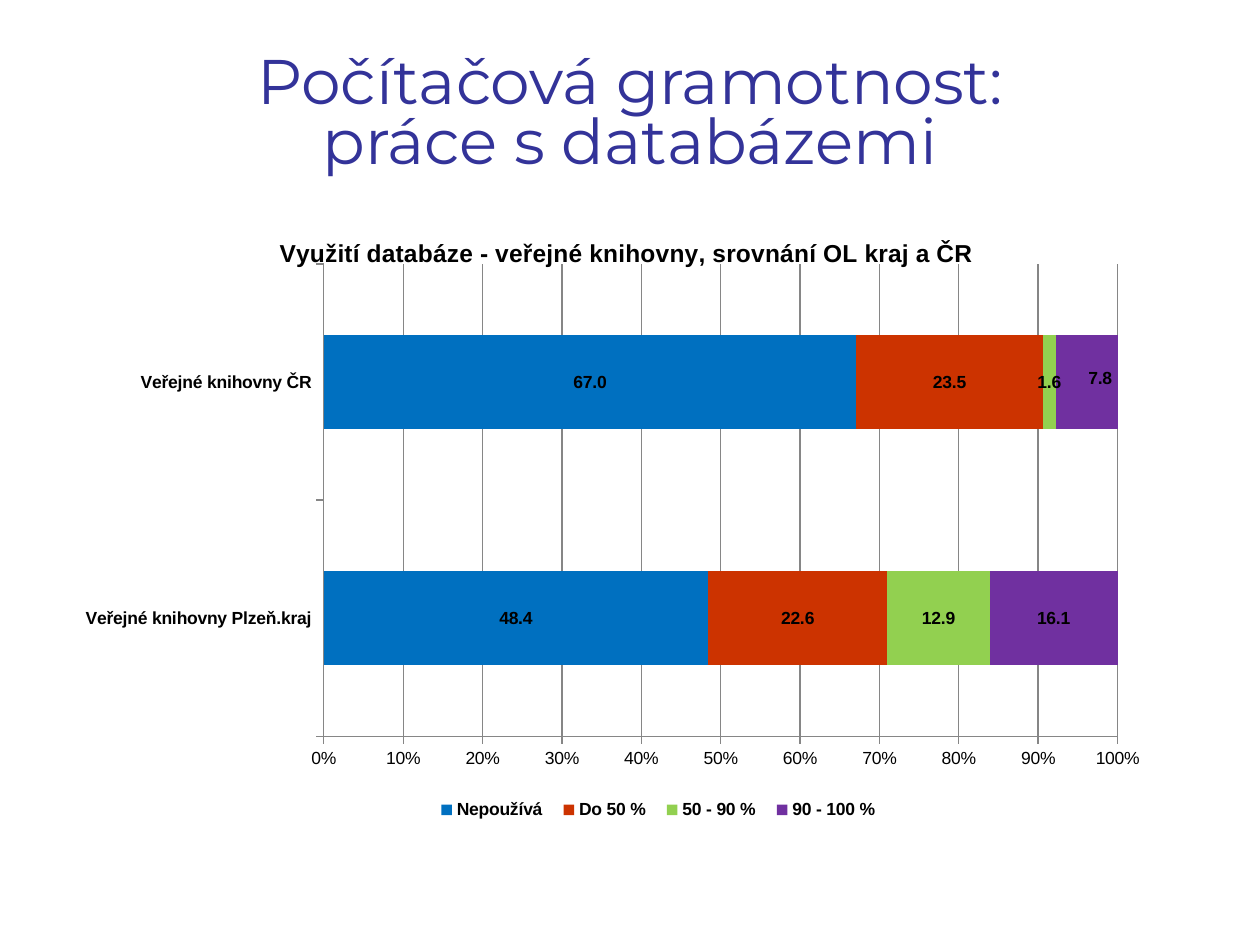
from lxml.etree import SubElement
from pptx import Presentation
from pptx.chart.data import CategoryChartData
from pptx.dml.color import RGBColor
from pptx.enum.chart import XL_CHART_TYPE as ChartType
from pptx.enum.chart import XL_LEGEND_POSITION as LegendPosition
from pptx.enum.chart import XL_TICK_MARK as TickMark
from pptx.enum.text import MSO_ANCHOR as Anchor
from pptx.enum.text import PP_ALIGN as Align
from pptx.oxml.ns import qn
from pptx.util import Pt

BLACK = RGBColor(0x00, 0x00, 0x00)
INDIGO = RGBColor(0x33, 0x33, 0x99)
GRAY = RGBColor(0x86, 0x86, 0x86)
BLUE = RGBColor(0x00, 0x70, 0xC0)
RED = RGBColor(0xCC, 0x33, 0x00)
GREEN = RGBColor(0x92, 0xD0, 0x50)
PURPLE = RGBColor(0x70, 0x30, 0xA0)

LIBRARIES = ["Veřejné knihovny Plzeň.kraj", "Veřejné knihovny ČR"]
USAGE = [
    ("Nepoužívá", (48.4, 67.0), BLUE),
    ("Do 50 %", (22.6, 23.5), RED),
    ("50 - 90 %", (12.9, 1.6), GREEN),
    ("90 - 100 %", (16.1, 7.8), PURPLE),
]
VALUE_FORMAT = "###0.0"


def style_font(font, size, color=BLACK, bold=False, name="Arial"):
    font.name = name
    font.size = Pt(size)
    font.bold = bold
    font.color.rgb = color


def place(element, after, **settings):
    """Give a chart part a manual layout, put right after a given child."""
    for old in element.findall(qn("c:layout")):
        element.remove(old)
    layout = SubElement(element, qn("c:layout"))
    manual = SubElement(layout, qn("c:manualLayout"))
    for key, value in settings.items():
        SubElement(manual, qn(f"c:{key}")).set("val", str(value))
    if after is None:
        element.insert(0, layout)
    else:
        element.find(qn(after)).addnext(layout)


def add_heading(page, lines):
    box = page.shapes.add_textbox(Pt(36), Pt(21.6), Pt(648), Pt(90))
    frame = box.text_frame
    frame.word_wrap = True
    frame.vertical_anchor = Anchor.MIDDLE
    para = frame.paragraphs[0]
    para.alignment = Align.CENTER
    para.line_spacing = 0.8
    for index, line in enumerate(lines):
        if index:
            para.add_line_break()
        span = para.add_run()
        span.text = line
        style_font(span.font, 36, INDIGO, name="Montserrat")


def style_axis(axis, bold):
    axis.major_tick_mark = TickMark.OUTSIDE
    axis.minor_tick_mark = TickMark.NONE
    axis.format.line.color.rgb = GRAY
    axis.format.line.width = Pt(0.75)
    style_font(axis.tick_labels.font, 10, bold=bold)


def style_series(series, color):
    series.format.fill.solid()
    series.format.fill.fore_color.rgb = color
    labels = series.data_labels
    labels.show_value = True
    labels.number_format = VALUE_FORMAT
    labels.number_format_is_linked = False
    style_font(labels.font, 10, bold=True)


def add_chart_title(chart, text):
    para = chart.chart_title.text_frame.paragraphs[0]
    span = para.add_run()
    span.text = text
    style_font(span.font, 14, bold=True)
    chart.chart_title.include_in_layout = False
    title = chart.element.find(".//" + qn("c:title"))
    place(title, "c:tx", xMode="edge", yMode="edge", x=0.187, y=0.02)


def add_legend(chart):
    chart.has_legend = True
    legend = chart.legend
    legend.position = LegendPosition.BOTTOM
    legend.include_in_layout = False
    style_font(legend.font, 10, bold=True)
    place(chart.element.find(".//" + qn("c:legend")), "c:legendPos",
          xMode="edge", yMode="edge", x=0.32, y=0.92, w=0.41, h=0.05)


def add_usage_chart(page):
    data = CategoryChartData(number_format=VALUE_FORMAT)
    data.categories = LIBRARIES
    for name, values, _ in USAGE:
        data.add_series(name, values)
    chart = page.shapes.add_chart(
        ChartType.BAR_STACKED_100, Pt(36), Pt(126), Pt(648), Pt(356.4), data
    ).chart
    style_font(chart.font, 10)

    # Bars and their labels
    plot = chart.plots[0]
    plot.vary_by_categories = False
    plot.gap_width = 150
    plot.overlap = 100
    for series, (_, _, color) in zip(plot.series, USAGE):
        style_series(series, color)

    # The last label of the upper bar sits a little to the right
    last = plot.series[-1]
    style_font(last.points[1].data_label.font, 10, bold=True)
    place(last.data_labels._element.find(qn("c:dLbl")), "c:idx", x=0.012, y=-0.006)

    # Axes
    style_axis(chart.category_axis, bold=True)
    value_axis = chart.value_axis
    style_axis(value_axis, bold=False)
    value_axis.tick_labels.number_format = "0%"
    value_axis.tick_labels.number_format_is_linked = False
    value_axis.has_major_gridlines = True
    grid = value_axis.major_gridlines.format.line
    grid.color.rgb = GRAY
    grid.width = Pt(0.75)

    # Title, legend and plot area
    add_chart_title(chart, "Využití databáze - veřejné knihovny, srovnání OL kraj a ČR")
    add_legend(chart)
    place(chart.element.find(".//" + qn("c:plotArea")), None,
          layoutTarget="inner", xMode="edge", yMode="edge",
          x=0.23, y=0.07, w=0.7, h=0.757)


def main():
    deck = Presentation()
    deck.slide_width, deck.slide_height = Pt(720), Pt(540)
    page = deck.slides.add_slide(deck.slide_layouts[6])
    add_heading(page, ["Počítačová gramotnost:", "práce s databázemi"])
    add_usage_chart(page)
    deck.save("out.pptx")


if __name__ == "__main__":
    main()
